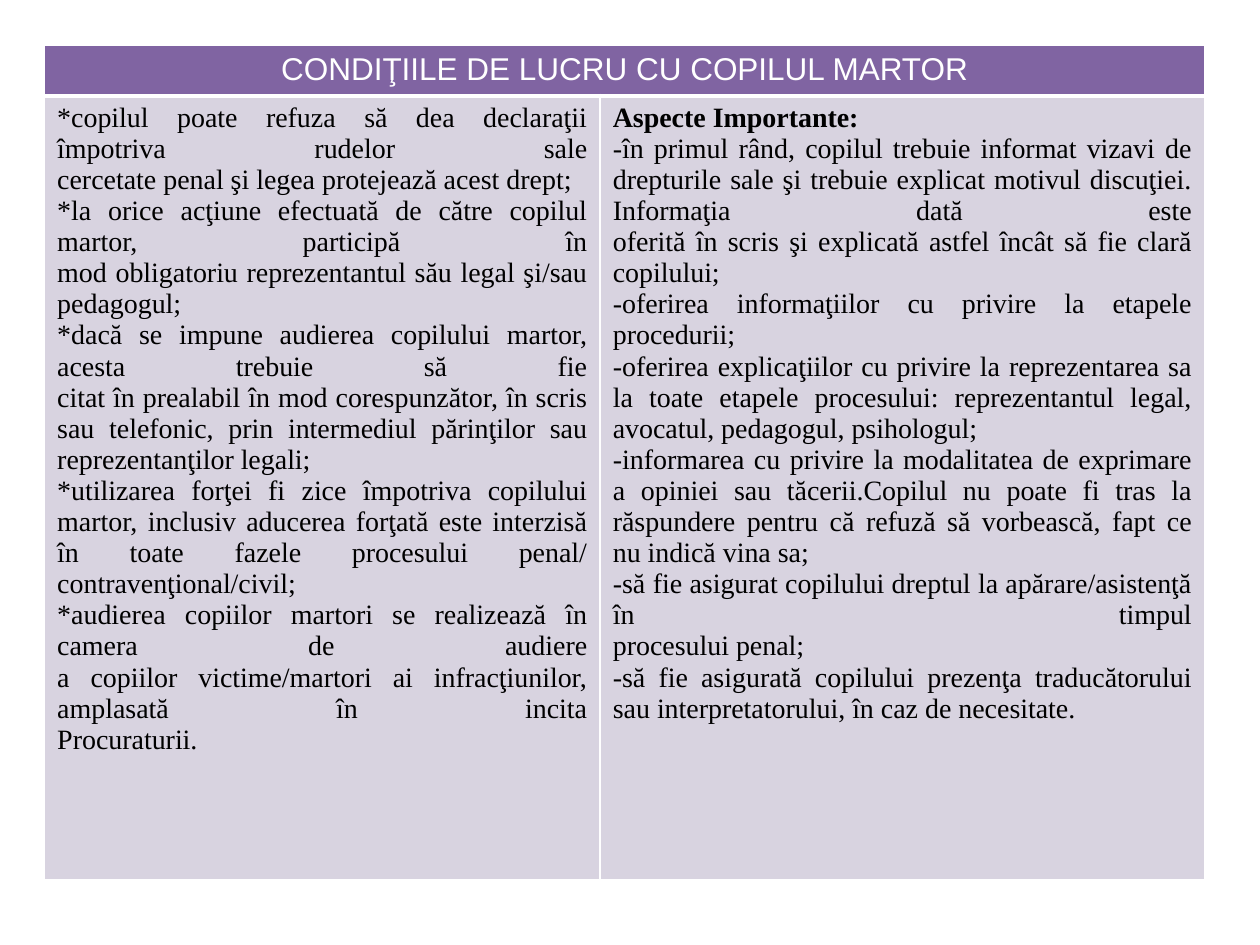
from copy import deepcopy
from dataclasses import dataclass

from lxml import etree
from pptx import Presentation
from pptx.dml.color import RGBColor
from pptx.enum.text import PP_ALIGN
from pptx.oxml.ns import qn
from pptx.util import Pt

CENTER, JUSTIFY = PP_ALIGN.CENTER, PP_ALIGN.JUSTIFY

COLORS = {
    "header": "8064A2",
    "body": "D8D3E0",
    "border": "FFFFFF",
    "header_text": "FFFFFF",
    "body_text": "000000",
}


@dataclass(frozen=True)
class CellStyle:
    fill: str
    text: str
    font: str
    size: float
    align: PP_ALIGN
    borders: dict[str, float]


THIN, THICK = 1, 3
HEADER = CellStyle("header", "header_text", "Arial", 18, CENTER,
                   {"lnL": THIN, "lnR": THIN, "lnT": THIN, "lnB": THICK})
BODY = CellStyle("body", "body_text", "Times New Roman", 16, JUSTIFY,
                 {"lnL": THIN, "lnR": THIN, "lnT": THICK, "lnB": THIN})

TITLE = "CONDIŢIILE DE LUCRU CU COPILUL MARTOR"
CONDITIONS = [
    "*copilul poate refuza să dea declaraţii împotriva rudelor sale\n"
    "cercetate penal şi legea protejează acest drept;",
    "*la orice acţiune efectuată de către copilul martor, participă în\n"
    "mod obligatoriu reprezentantul său legal şi/sau pedagogul;",
    "*dacă se impune audierea copilului martor, acesta trebuie să fie\n"
    "citat în prealabil în mod corespunzător, în scris sau telefonic, "
    "prin intermediul părinţilor sau reprezentanţilor legali;",
    "*utilizarea forţei fi zice împotriva copilului martor, inclusiv aducerea "
    "forţată este interzisă în toate fazele procesului penal/\n"
    "contravenţional/civil;",
    "*audierea copiilor martori se realizează în camera de audiere\n"
    "a copiilor victime/martori ai infracţiunilor, amplasată în incita\n"
    "Procuraturii.",
]
ASPECTS_HEADING = "Aspecte Importante:"
ASPECTS = [
    "-în primul rând, copilul trebuie informat vizavi de drepturile sale şi "
    "trebuie explicat motivul discuţiei. Informaţia dată este\n"
    "oferită în scris şi explicată astfel încât să fie clară copilului;",
    "-oferirea informaţiilor cu privire la etapele procedurii;",
    "-oferirea explicaţiilor cu privire la reprezentarea sa la toate etapele "
    "procesului: reprezentantul legal, avocatul, pedagogul, psihologul;",
    "-informarea cu privire la modalitatea de exprimare a opiniei sau "
    "tăcerii.Copilul nu poate fi tras la răspundere pentru că refuză să "
    "vorbească, fapt ce nu indică vina sa;",
    "-să fie asigurat copilului dreptul la apărare/asistenţă în timpul\n"
    "procesului penal;",
    "-să fie asigurată copilului prezenţa traducătorului sau "
    "interpretatorului, în caz de necesitate.",
]


def color(name: str) -> RGBColor:
    return RGBColor.from_string(COLORS[name])


def style_cell(cell, style: CellStyle) -> None:
    """Draw the borders first, since they precede the fill in the XML."""
    properties = cell._tc.get_or_add_tcPr()
    for side, width in style.borders.items():
        line = etree.SubElement(properties, qn(f"a:{side}"), w=str(Pt(width)))
        solid = etree.SubElement(line, qn("a:solidFill"))
        etree.SubElement(solid, qn("a:srgbClr"), val=COLORS["border"])
    cell.fill.solid()
    cell.fill.fore_color.rgb = color(style.fill)


def write_cell(cell, paragraphs: list[str], style: CellStyle,
               bold_heading: bool = False) -> None:
    frame = cell.text_frame
    for index, words in enumerate(paragraphs):
        paragraph = frame.paragraphs[0] if index == 0 else frame.add_paragraph()
        paragraph.text = words
        paragraph.alignment = style.align
        for run in paragraph.runs:
            run.font.name = style.font
            run.font.size = Pt(style.size)
            run.font.bold = bold_heading and index == 0
            run.font.color.rgb = color(style.text)
        # Line breaks take the text format, so that line heights stay even
        for line_break in paragraph._p.findall(qn("a:br")):
            line_break.append(deepcopy(paragraph.runs[0]._r.rPr))


def main() -> None:
    presentation = Presentation()
    presentation.slide_width, presentation.slide_height = Pt(720), Pt(540)
    slide = presentation.slides.add_slide(presentation.slide_layouts[6])

    # Table grid
    column_widths, row_heights = [317.5, 345.5], [28.8, 447.8]
    table = slide.shapes.add_table(
        2, 2, Pt(25.5), Pt(26), Pt(sum(column_widths)), Pt(sum(row_heights))).table
    for column, width in zip(table.columns, column_widths):
        column.width = Pt(width)
    for row, height, style in zip(table.rows, row_heights, (HEADER, BODY)):
        row.height = Pt(height)
        for cell in row.cells:
            style_cell(cell, style)

    # Heading across both columns
    table.cell(0, 0).merge(table.cell(0, 1))
    write_cell(table.cell(0, 0), [TITLE], HEADER)

    # Conditions on the left, important aspects on the right
    write_cell(table.cell(1, 0), CONDITIONS, BODY)
    write_cell(table.cell(1, 1), [ASPECTS_HEADING, *ASPECTS], BODY,
               bold_heading=True)

    presentation.save("out.pptx")


if __name__ == "__main__":
    main()
